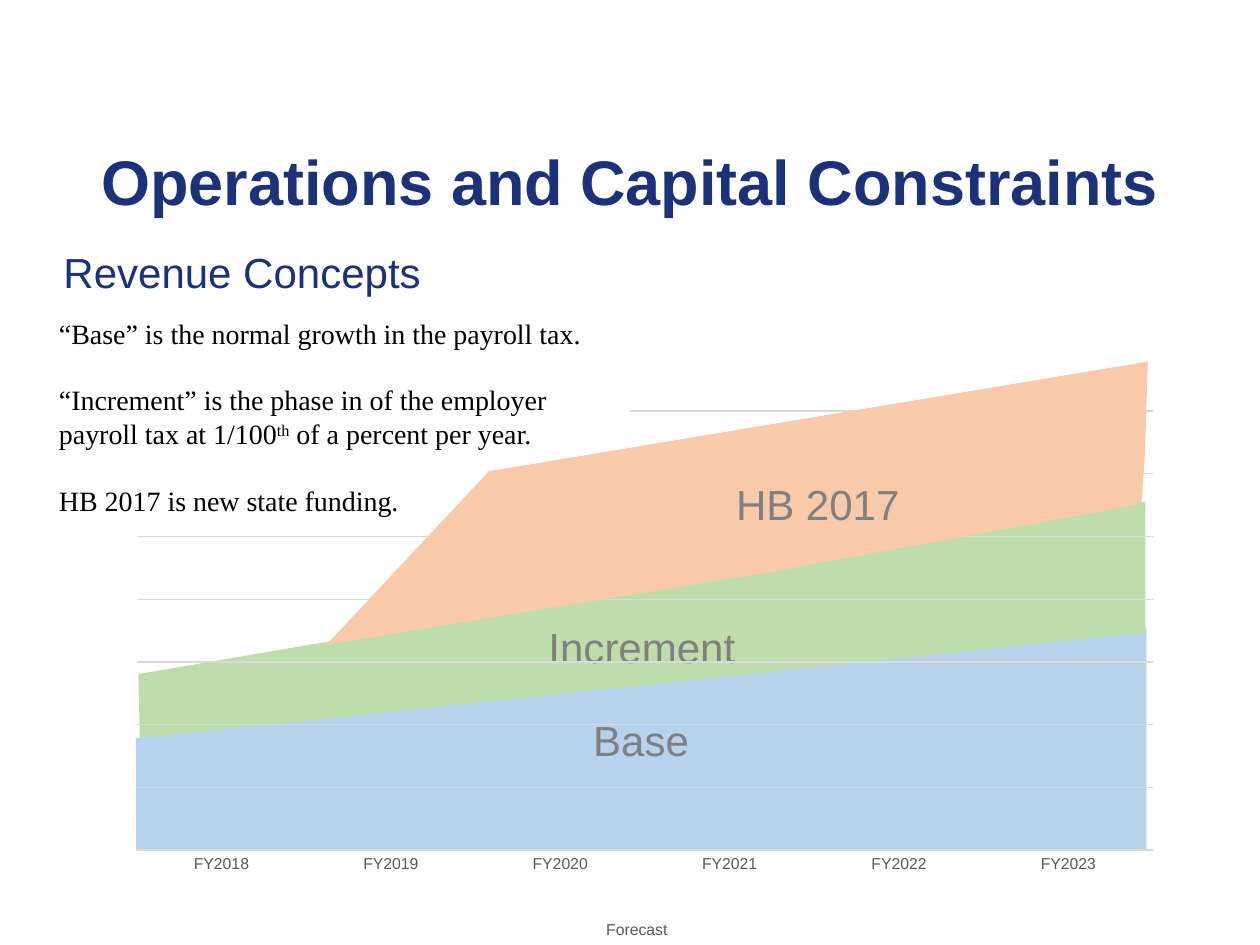
from dataclasses import dataclass

from lxml import etree
from pptx import Presentation
from pptx.chart.data import CategoryChartData
from pptx.dml.color import RGBColor
from pptx.enum.chart import XL_CHART_TYPE as ChartType, XL_LEGEND_POSITION as LegendPosition
from pptx.enum.chart import XL_TICK_MARK as TickMark
from pptx.enum.shapes import MSO_SHAPE as Shape
from pptx.enum.text import MSO_ANCHOR as Anchor, PP_ALIGN as Align
from pptx.oxml.ns import qn
from pptx.util import Cm, Pt


@dataclass(frozen=True)
class Theme:
    navy: str = "1B327A"
    black: str = "000000"
    white: str = "FFFFFF"
    blue: str = "B6D2EC"
    green: str = "BFDDAB"
    orange: str = "F8CAAA"
    label: str = "808080"
    axis_text: str = "595959"
    grid: str = "D9D9D9"
    sans: str = "Arial"
    serif: str = "Times New Roman"
    title_size: int = 36
    heading_size: int = 24
    body_size: int = 16
    chart_size: int = 10
    axis_size: int = 9


class SlideBuilder:
    def __init__(self, slide, theme):
        self.slide = slide
        self.theme = theme

    def style(self, font, size, color, name=None, bold=False):
        font.name = name or self.theme.sans
        font.size = Pt(size)
        font.bold = bold
        font.color.rgb = RGBColor.from_string(color)

    def fill(self, shape, color):
        shape.shadow.inherit = False
        shape.fill.solid()
        shape.fill.fore_color.rgb = RGBColor.from_string(color)
        shape.line.fill.background()

    def centred_text(self, shape, text, size, color, bold=False):
        frame = shape.text_frame
        frame.word_wrap = True
        frame.vertical_anchor = Anchor.MIDDLE
        frame.text = text
        paragraph = frame.paragraphs[0]
        paragraph.alignment = Align.CENTER
        self.style(paragraph.runs[0].font, size, color, bold=bold)

    def heading(self, text, box, size, bold=False):
        shape = self.slide.shapes.add_textbox(*map(Cm, box))
        self.centred_text(shape, text, size, self.theme.navy, bold)

    def band(self, text, points, color, left_inset=0.25, top_inset=0.13):
        start, *rest = [(Cm(x), Cm(y)) for x, y in points]
        builder = self.slide.shapes.build_freeform(*start)
        builder.add_line_segments(rest, close=True)
        shape = builder.convert_to_shape()
        self.fill(shape, color)
        self.centred_text(shape, text, self.theme.heading_size, self.theme.label)
        shape.text_frame.margin_left = Cm(left_inset)
        shape.text_frame.margin_top = Cm(top_inset)

    def explanation(self, paragraphs, box):
        """Each paragraph is a list of (text, is_superscript) pieces."""
        shape = self.slide.shapes.add_shape(Shape.RECTANGLE, *map(Cm, box))
        self.fill(shape, self.theme.white)
        frame = shape.text_frame
        frame.word_wrap = True
        frame.vertical_anchor = Anchor.TOP
        for index, pieces in enumerate(paragraphs):
            paragraph = frame.add_paragraph() if index else frame.paragraphs[0]
            paragraph.alignment = Align.LEFT
            if index:
                paragraph.space_before = Pt(19)
            for text, is_superscript in pieces:
                run = paragraph.add_run()
                run.text = text
                self.style(run.font, self.theme.body_size, self.theme.black, self.theme.serif)
                if is_superscript:
                    run._r.get_or_add_rPr().set("baseline", "30000")

    def forecast_chart(self, categories, values, box, plot_area):
        theme = self.theme
        data = CategoryChartData()
        data.categories = categories
        data.add_series("Forecast", values)
        frame = self.slide.shapes.add_chart(ChartType.COLUMN_STACKED, *map(Cm, box), data)
        chart = frame.chart
        self.style(chart.font, theme.chart_size, theme.black)
        chart.has_title = False

        # Columns take up space but have no fill
        plot = chart.plots[0]
        plot.gap_width = 200
        plot.overlap = 100
        plot.vary_by_categories = False
        plot.series[0].format.fill.background()
        plot.series[0].format.line.fill.background()

        # Axes and gridlines
        category_axis, value_axis = chart.category_axis, chart.value_axis
        category_axis.major_tick_mark = TickMark.NONE
        category_axis.minor_tick_mark = TickMark.NONE
        self.style(category_axis.tick_labels.font, theme.axis_size, theme.axis_text)
        value_axis.visible = False
        value_axis.minimum_scale = 57
        value_axis.maximum_scale = 137
        value_axis.major_unit = 11.4
        value_axis.has_major_gridlines = True
        for line in (category_axis.format.line, value_axis.major_gridlines.format.line):
            line.color.rgb = RGBColor.from_string(theme.grid)
            line.width = Pt(0.75)

        # Legend
        chart.has_legend = True
        chart.legend.position = LegendPosition.BOTTOM
        chart.legend.include_in_layout = False
        self.style(chart.legend.font, theme.axis_size, theme.axis_text)

        # Fixed inner plot area
        area = chart._chartSpace.find(".//" + qn("c:plotArea"))
        layout = area.find(qn("c:layout"))
        if layout is None:
            layout = etree.Element(qn("c:layout"))
            area.insert(0, layout)
        manual = etree.SubElement(layout, qn("c:manualLayout"))
        settings = [("layoutTarget", "inner"), ("xMode", "edge"), ("yMode", "edge")]
        for tag, value in settings + list(zip("xywh", plot_area)):
            etree.SubElement(manual, qn(f"c:{tag}")).set("val", str(value))


def main():
    theme = Theme()
    presentation = Presentation()
    presentation.slide_width, presentation.slide_height = Cm(25.4), Cm(19.05)
    slide = presentation.slides.add_slide(presentation.slide_layouts[6])
    builder = SlideBuilder(slide, theme)

    # Revenue bands behind the gridlines
    builder.band("Base", [(2.74, 14.88), (23.11, 12.65), (23.11, 17.12), (2.74, 17.15)],
                 theme.blue)
    builder.band("Increment", [(2.79, 13.59), (2.82, 14.88), (23.09, 12.75), (23.09, 10.11)],
                 theme.green, top_inset=1.2)

    # Fiscal year axis
    builder.forecast_chart([f"FY{year}" for year in range(2018, 2024)],
                           [80, 81, 92, 89, 99, 100],
                           (1.75, 6.96, 21.89, 12.09), (0.046, 0.108, 0.936, 0.734))

    # Explanations
    builder.explanation([
        [("“Base” is the normal growth in the payroll tax.", False)],
        [("“Increment” is the phase in of the employer payroll tax at 1/100", False),
         ("th", True), (" of a percent per year.", False)],
        [("HB 2017 is new state funding.", False)],
    ], (0.94, 6.25, 11.76, 4.37))

    # State funding band in front of the gridlines
    builder.band("HB 2017", [(6.58, 13), (9.86, 9.5), (23.14, 7.29), (23.08, 9.2),
                             (23.01, 10.16), (15.65, 11.51)],
                 theme.orange, left_inset=3.5)

    # Headings
    builder.heading("Revenue Concepts", (1.02, 4.42, 7.72, 2.11), theme.heading_size)
    builder.heading("Operations and Capital Constraints", (0, 2.59, 25.4, 2.11),
                    theme.title_size, bold=True)

    presentation.save("out.pptx")


if __name__ == "__main__":
    main()
